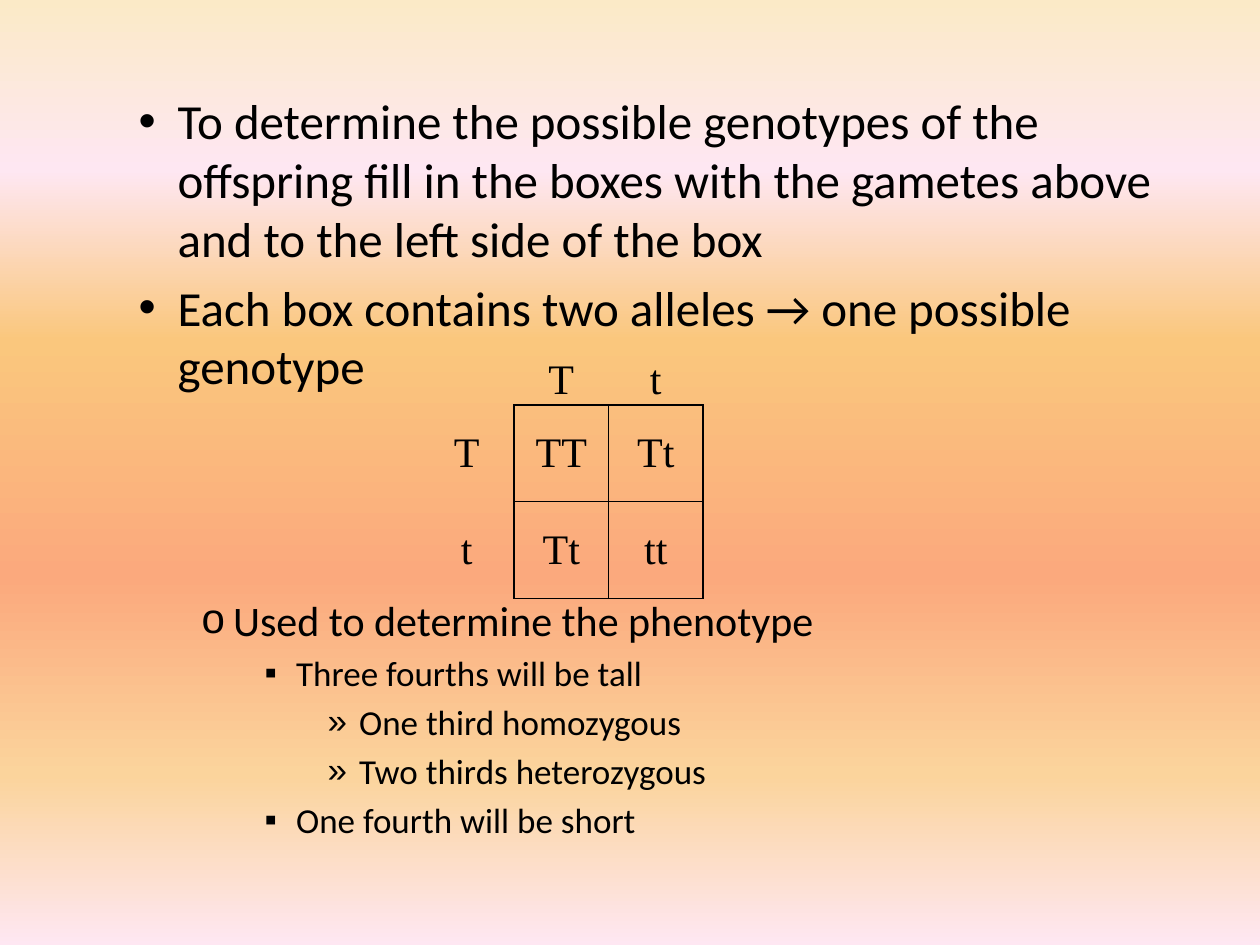
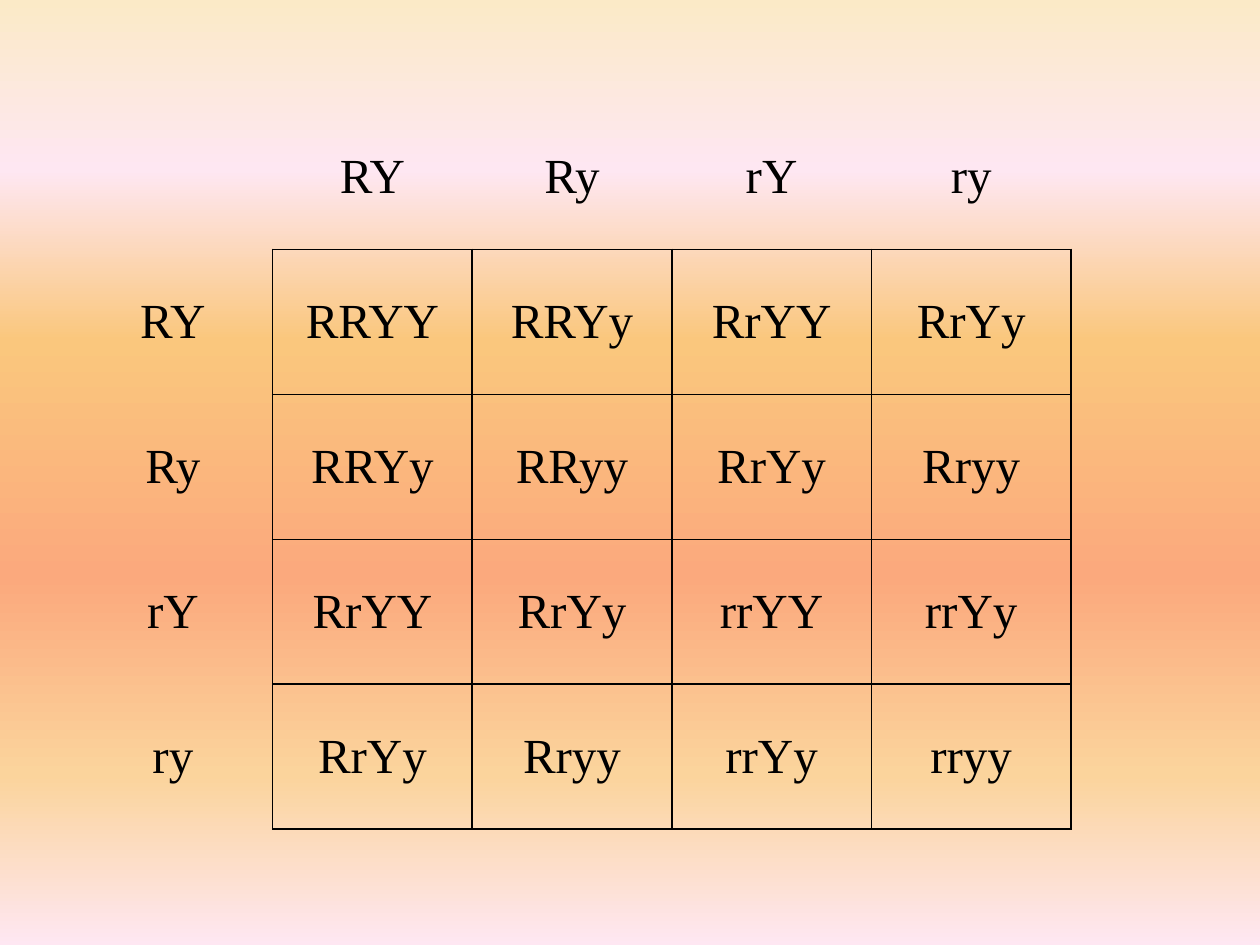
from lxml import etree
from pptx import Presentation
from pptx.dml.color import RGBColor
from pptx.enum.text import MSO_ANCHOR, MSO_AUTO_SIZE, PP_ALIGN
from pptx.oxml.ns import qn
from pptx.util import Inches, Pt

CENTER, MIDDLE, TOP = PP_ALIGN.CENTER, MSO_ANCHOR.MIDDLE, MSO_ANCHOR.TOP
NO_FIT = MSO_AUTO_SIZE.NONE
BODY_LAYOUT, BLANK_LAYOUT = 1, 6
INK = "000000"
BODY_FONT, BULLET_FONT, TABLE_FONT = "Calibri", "Arial", "Times New Roman"
SUNSET = [(0, "FBEAC7"), (18, "FEE7F2"), (36, "FAC77D"),
          (61, "FBA97D"), (82, "FBD49C"), (100, "FEE7F2")]
LEVELS = [("•", 28, 0.81, 0.31), ("o", 24, 1.25, 0.25),
          ("▪", 20, 1.75, 0.25), ("»", 20, 2.25, 0.25)]
TABLE_GAP = 114
POINTS = [
    (0, "To determine the possible genotypes of the offspring fill in the boxes "
        "with the gametes above and to the left side of the box"),
    (0, "Each box contains two alleles → one possible genotype"),
    (1, "Used to determine the phenotype"),
    (2, "Three fourths will be tall"),
    (3, "One third homozygous"),
    (3, "Two thirds heterozygous"),
    (2, "One fourth will be short"),
]


def color(hex_code):
    """Turn a hex string into a colour."""
    return RGBColor.from_string(hex_code)


def style_runs(p, font, size):
    """Format every run of a paragraph."""
    for r in p.runs:
        r.font.name, r.font.size = font, Pt(size)
        r.font.color.rgb = color(INK)


def set_background(master):
    """Give the master a vertical gradient of several stops."""
    fill = master.background.fill
    fill.gradient()
    fill.gradient_angle = 270
    stops = next(master.element.cSld.iter(qn("a:gsLst")))
    for stop in list(stops):
        stops.remove(stop)
    for share, hex_code in SUNSET:
        stop = etree.SubElement(stops, qn("a:gs"), pos=str(share * 1000))
        etree.SubElement(stop, qn("a:srgbClr"), val=hex_code)


def add_point(p, level, text):
    """Write one bulleted line with the look of its level."""
    bullet, size, margin, hang = LEVELS[level]
    p.text, p.level = text, level
    p.line_spacing = 1.0
    p.space_before = Pt(TABLE_GAP if level == 1 else 0.2 * size)
    p.space_after = Pt(0)
    style_runs(p, BODY_FONT, size)
    pPr = p._p.get_or_add_pPr()
    pPr.set("marL", str(Inches(margin)))
    pPr.set("indent", str(-Inches(hang)))
    etree.SubElement(pPr, qn("a:buFont"), typeface=BULLET_FONT)
    etree.SubElement(pPr, qn("a:buChar"), char=bullet)


def fill_body(sp, box, points):
    """Place the body placeholder and write its list."""
    sp.left, sp.top, sp.width, sp.height = map(Inches, box)
    tf = sp.text_frame
    tf.word_wrap, tf.auto_size, tf.vertical_anchor = True, NO_FIT, TOP
    for i, (level, text) in enumerate(points):
        add_point(tf.add_paragraph() if i else tf.paragraphs[0], level, text)


def set_borders(cell, drawn):
    """Draw the named sides of a cell and clear the others."""
    tcPr = cell._tc.get_or_add_tcPr()
    for i, side in enumerate("LRTB"):
        ln = etree.Element(qn("a:ln" + side), w=str(Pt(1)))
        tcPr.insert(i, ln)
        if side in drawn:
            fill = etree.SubElement(ln, qn("a:solidFill"))
            etree.SubElement(fill, qn("a:srgbClr"), val=INK)
        else:
            etree.SubElement(ln, qn("a:noFill"))


def cross(mother, father):
    """Pair the alleles of two gametes, dominant first."""
    return "".join("".join(sorted(pair)) for pair in zip(mother, father))


def add_punnett(s, box, gametes, size, head_share):
    """Build a Punnett square whose header row takes a share of the box."""
    n = len(gametes)
    left, top, width, height = map(Inches, box)
    table = s.shapes.add_table(n + 1, n + 1, left, top, width, height).table
    table.first_row = table.horz_banding = False
    for col in table.columns:
        col.width = int(width / (n + 1))
    for i, row in enumerate(table.rows):
        row.height = int(height * ((1 - head_share) / n if i else head_share))
    for i, mother in enumerate([""] + gametes):
        for j, father in enumerate([""] + gametes):
            cell = table.cell(i, j)
            cell.fill.background()
            cell.margin_left = cell.margin_right = Inches(0.07)
            cell.margin_top = cell.margin_bottom = 0
            cell.vertical_anchor = MIDDLE
            p = cell.text_frame.paragraphs[0]
            p.alignment = CENTER
            if i and j:
                p.text, sides = cross(mother, father), "LRTB"
            else:
                p.text = mother or father
                sides = "R" if i else "B" if j else ""
            style_runs(p, TABLE_FONT, size)
            set_borders(cell, sides)


def build_single_trait(prs):
    """Build the slide on the cross of one trait."""
    s = prs.slides.add_slide(prs.slide_layouts[BODY_LAYOUT])
    title = s.shapes.title._element
    title.getparent().remove(title)
    fill_body(s.placeholders[1], (0.5, 0.67, 9, 6.83), POINTS)
    add_punnett(s, (3.33, 2.83, 2.25, 1.92), ["T", "t"], 24, 0.2)


def build_two_traits(prs):
    """Build the slide on the cross of two traits."""
    s = prs.slides.add_slide(prs.slide_layouts[BLANK_LAYOUT])
    add_punnett(s, (0.58, 0.83, 7.92, 5.75), ["RY", "Ry", "rY", "ry"], 28, 0.2)


def main():
    """Build and save the presentation."""
    prs = Presentation()
    prs.slide_width, prs.slide_height = Inches(10), Inches(7.5)
    set_background(prs.slide_master)
    build_single_trait(prs)
    build_two_traits(prs)
    prs.save("out.pptx")


if __name__ == "__main__":
    main()
